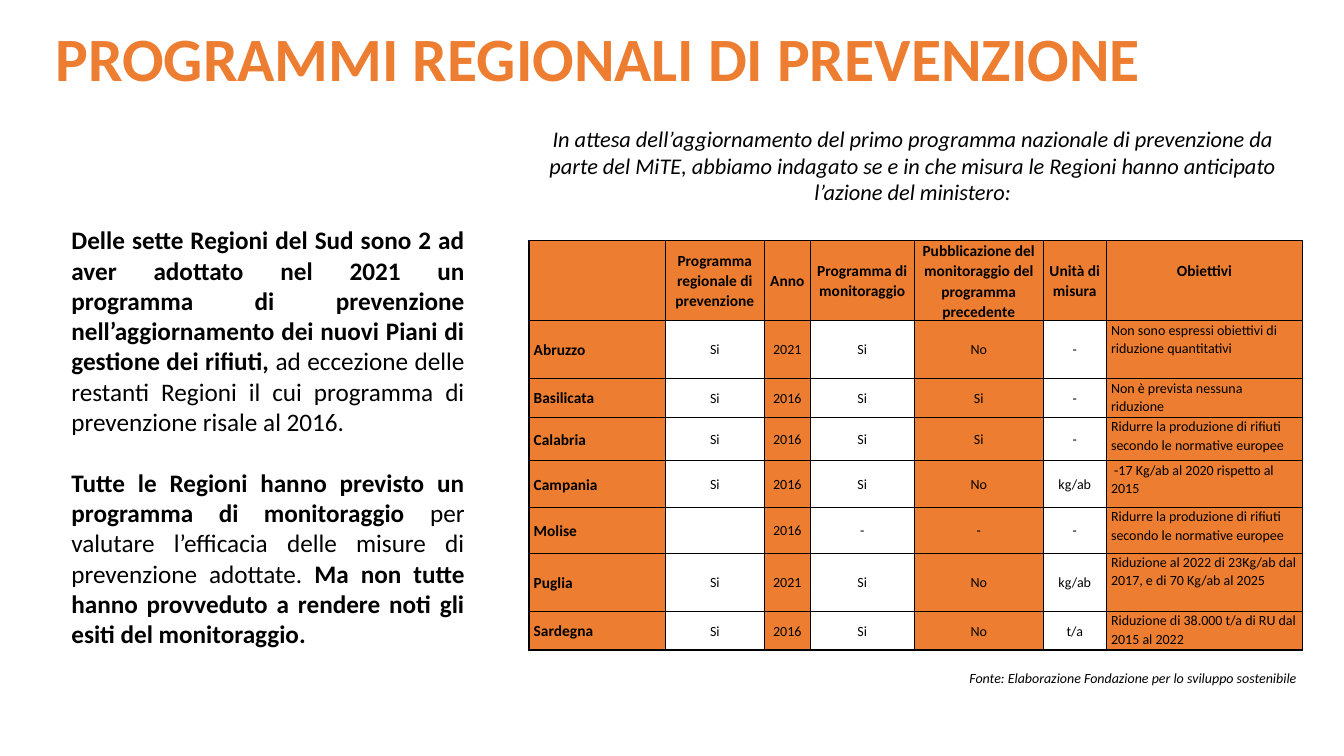
from lxml import etree
from pptx import Presentation
from pptx.dml.color import RGBColor
from pptx.enum.text import MSO_ANCHOR, MSO_AUTO_SIZE, PP_ALIGN
from pptx.oxml.ns import qn
from pptx.util import Cm, Pt

LEFT, CENTER, JUSTIFY = PP_ALIGN.LEFT, PP_ALIGN.CENTER, PP_ALIGN.JUSTIFY
TOP, MIDDLE = MSO_ANCHOR.TOP, MSO_ANCHOR.MIDDLE
NO_AUTOFIT = MSO_AUTO_SIZE.NONE
TITLE_ONLY = 5

FONT = "Calibri"
COLORS = {"orange": "ED7D31", "black": "000000", "white": "FFFFFF"}

TITLE = "PROGRAMMI REGIONALI DI PREVENZIONE"
INTRO = ("In attesa dell’aggiornamento del primo programma nazionale di prevenzione "
         "da parte del MiTE, abbiamo indagato se e in che misura le Regioni hanno "
         "anticipato l’azione del ministero:")
SOURCE = "Fonte: Elaborazione Fondazione per lo sviluppo sostenibile"

# Each paragraph is a list of (text, bold)
FINDINGS = [
    [("Delle sette Regioni del Sud sono 2 ad aver adottato nel 2021 un programma di "
      "prevenzione nell’aggiornamento dei nuovi Piani di gestione dei rifiuti, ", True),
     ("ad eccezione delle restanti Regioni il cui programma di prevenzione risale "
      "al 2016.", False)],
    [("Tutte le Regioni hanno previsto un programma di monitoraggio ", True),
     ("per valutare l’efficacia delle misure di prevenzione adottate. ", False),
     ("Ma non tutte hanno provveduto a rendere noti gli esiti del monitoraggio.", True)],
]

HEADERS = ["", "Programma regionale di prevenzione", "Anno", "Programma di monitoraggio",
           "Pubblicazione del monitoraggio del programma precedente", "Unità di misura",
           "Obiettivi"]
REGIONS = [
    ("Abruzzo", "Si", "2021", "Si", "No", "-",
     "Non sono espressi obiettivi di riduzione quantitativi"),
    ("Basilicata", "Si", "2016", "Si", "Si", "-", "Non è prevista nessuna riduzione"),
    ("Calabria", "Si", "2016", "Si", "Si", "-",
     "Ridurre la produzione di rifiuti secondo le normative europee"),
    ("Campania", "Si", "2016", "Si", "No", "kg/ab", " -17 Kg/ab al 2020 rispetto al 2015"),
    ("Molise", "", "2016", "-", "-", "-",
     "Ridurre la produzione di rifiuti secondo le normative europee"),
    ("Puglia", "Si", "2021", "Si", "No", "kg/ab",
     "Riduzione al 2022 di 23Kg/ab dal 2017, e di 70 Kg/ab al 2025"),
    ("Sardegna", "Si", "2016", "Si", "No", "t/a",
     "Riduzione di 38.000 t/a di RU dal 2015 al 2022"),
]
COLUMN_WIDTHS = [3.44, 2.49, 1.16, 2.62, 3.25, 1.59, 4.95]
ROW_HEIGHTS = [2.02, 1.46, 0.98, 1.09, 1.18, 1.15, 1.47, 0.97]
NAME_COLUMN, GOAL_COLUMN = 0, len(HEADERS) - 1


def write(para, text, size=10, color="black", bold=False, italic=False,
          align=LEFT, line_spacing=None):
    """Add one formatted span to a paragraph and set the paragraph's layout."""
    para.alignment = align
    if line_spacing:
        para.line_spacing = line_spacing
    span = para.add_run()
    span.text = text
    span.font.name = FONT
    span.font.size = Pt(size)
    span.font.bold = bold
    span.font.italic = italic
    span.font.color.rgb = RGBColor.from_string(COLORS[color])


def add_text_box(page, left, top, width, height):
    frame = page.shapes.add_textbox(Cm(left), Cm(top), Cm(width), Cm(height)).text_frame
    frame.word_wrap = True
    return frame


def add_borders(cell):
    properties = cell._tc.get_or_add_tcPr()
    for side in ("a:lnL", "a:lnR", "a:lnT", "a:lnB"):
        line = etree.SubElement(properties, qn(side), w=str(Pt(1)))
        fill = etree.SubElement(line, qn("a:solidFill"))
        etree.SubElement(fill, qn("a:srgbClr"), val=COLORS["black"])


def fill_cell(cell, text, row, column):
    is_header = row == 0
    add_borders(cell)
    is_orange = is_header or column % 2 == 0
    cell.fill.solid()
    cell.fill.fore_color.rgb = RGBColor.from_string(COLORS["orange" if is_orange else "white"])
    cell.margin_left = cell.margin_right = Cm(0.12)
    cell.margin_top = Cm(0.51 if is_header and column == GOAL_COLUMN else 0)
    cell.margin_bottom = Cm(0)
    cell.vertical_anchor = TOP if column == GOAL_COLUMN else MIDDLE
    if text:
        is_label = is_header or column == NAME_COLUMN
        is_left = not is_header and column in (NAME_COLUMN, GOAL_COLUMN)
        write(cell.text_frame.paragraphs[0], text, size=11 if is_label else 10,
              bold=is_label, align=LEFT if is_left else CENTER, line_spacing=1.07)


def add_regions_table(page, left, top):
    rows = [HEADERS, *REGIONS]
    table = page.shapes.add_table(len(rows), len(HEADERS), Cm(left), Cm(top),
                                  Cm(sum(COLUMN_WIDTHS)), Cm(sum(ROW_HEIGHTS))).table
    table.first_row = table.horz_banding = False
    for column, width in zip(table.columns, COLUMN_WIDTHS):
        column.width = Cm(width)
    for row, height in zip(table.rows, ROW_HEIGHTS):
        row.height = Cm(height)
    for row, texts in enumerate(rows):
        for column, text in enumerate(texts):
            fill_cell(table.cell(row, column), text, row, column)


def main():
    deck = Presentation()
    deck.slide_width, deck.slide_height = Cm(33.87), Cm(19.05)
    page = deck.slides.add_slide(deck.slide_layouts[TITLE_ONLY])

    title = page.shapes.title
    title.left, title.top, title.width, title.height = Cm(1.14), Cm(-0.28), Cm(29.2), Cm(3.68)
    title.text_frame.auto_size = NO_AUTOFIT
    title.text_frame.vertical_anchor = MIDDLE
    write(title.text_frame.paragraphs[0], TITLE, size=44, color="orange", bold=True,
          line_spacing=0.9)

    findings = add_text_box(page, 1.55, 5.54, 10.41, 11.02)
    for index, spans in enumerate(FINDINGS):
        para = findings.add_paragraph() if index else findings.paragraphs[0]
        if index:
            para.space_before = Pt(22)
        for text, bold in spans:
            write(para, text, size=18, bold=bold, align=JUSTIFY)

    intro = add_text_box(page, 13.26, 3.02, 19.48, 3.07)
    write(intro.paragraphs[0], INTRO, size=16, italic=True, align=CENTER)

    source = add_text_box(page, 24.18, 16.71, 9.6, 0.69)
    write(source.paragraphs[0], SOURCE, italic=True, line_spacing=1.07)

    add_regions_table(page, 13.33, 6.06)
    deck.save("out.pptx")


if __name__ == "__main__":
    main()
